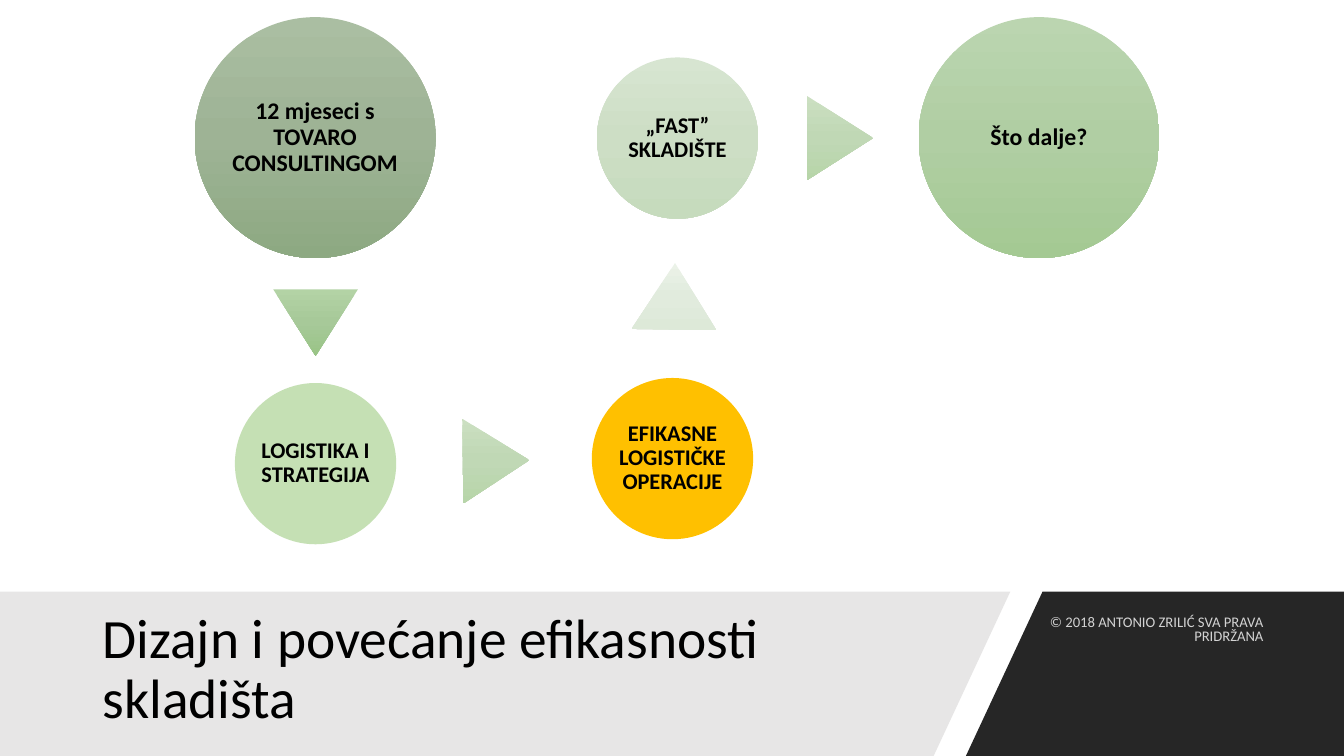
from copy import deepcopy
from pptx import Presentation
from pptx import util as u
from pptx.dml.color import RGBColor
from pptx.enum import shapes, text
from pptx.oxml.ns import qn
from lxml import etree

TITLE = "Dizajn i povećanje efikasnosti skladišta"
COPYRIGHT = "© 2018 ANTONIO ZRILIĆ SVA PRAVA PRIDRŽANA"
BIG, SMALL = 2.39, 1.6
ARROW_W, ARROW_H = 0.84, 0.66
PALE_ARROW = ("CBDFC1", "C0D8B5", "B7D5A9")

STEPS = [
    ("12 mjeseci s TOVARO CONSULTINGOM", 1.93, 0.17, BIG, 17, ("AABEA2", "9EB395", "8DA982")),
    ("LOGISTIKA I STRATEGIJA", 2.33, 3.8, SMALL, 16, ("C5E0B4",)),
    ("EFIKASNE LOGISTIČKE OPERACIJE", 5.87, 3.75, SMALL, 16, ("FFC000",)),
    ("„FAST” SKLADIŠTE", 5.92, 0.57, SMALL, 16, ("D7E5D1", "CDDEC5", "C6DBBD")),
    ("Što dalje?", 9.11, 0.17, BIG, 17, ("BBD5B0", "B0CEA3", "A4C993")),
]
ARROWS = [
    (2.71, 2.87, 180, ("B3D3A5", "A7C999", "99C486")),
    (4.5, 4.24, 89.2, PALE_ARROW),
    (6.27, 2.61, 0.9, ("EBF2E8", "E1EBDD", "DDE9D8")),
    (7.91, 1.04, 90, PALE_ARROW),
]
BANDS = [
    ("262626", [(10.34, 5.87), (13.33, 5.87), (13.33, 7.5), (9.58, 7.5)]),
    ("E7E6E6", [(0, 5.87), (10.02, 5.87), (9.26, 7.5), (0, 7.5)]),
]


def rgb(value):
    return RGBColor.from_string(value)


def paint(sp, colors):
    sp.shadow.inherit = False
    sp.line.fill.background()
    if len(colors) == 1:
        sp.fill.solid()
        sp.fill.fore_color.rgb = rgb(colors[0])
        return
    sp.fill.gradient()
    sp.fill.gradient_angle = 270
    grad = sp._element.spPr.find(qn("a:gradFill"))
    grad.set("rotWithShape", "0")
    stops = grad.find(qn("a:gsLst"))
    stops.insert(1, deepcopy(stops[0]))
    for i, (stop, color) in enumerate(zip(sp.fill.gradient_stops, colors)):
        stop.position = i / 2
        stop.color.rgb = rgb(color)


def write(sp, content, size, align, spacing, color="000000", bold=False):
    tf = sp.text_frame
    tf.word_wrap = True
    tf.vertical_anchor = text.MSO_ANCHOR.MIDDLE
    p = tf.paragraphs[0]
    p.text = content
    p.alignment = align
    p.line_spacing = spacing
    p.font.name = "Calibri"
    p.font.size = u.Pt(size)
    p.font.bold = bold
    p.font.color.rgb = rgb(color)
    return p


def add_text(s, box, *style):
    return write(s.shapes.add_textbox(*map(u.Inches, box)), *style)


def main():
    prs = Presentation()
    prs.slide_width, prs.slide_height = u.Inches(13.33), u.Inches(7.5)
    s = prs.slides.add_slide(prs.slide_layouts[6])

    for color, points in BANDS:
        corners = [(u.Inches(x), u.Inches(y)) for x, y in points]
        outline = s.shapes.build_freeform(*corners[0])
        outline.add_line_segments(corners[1:], close=True)
        paint(outline.convert_to_shape(), (color,))

    for label, x, y, d, size, colors in STEPS:
        sp = s.shapes.add_shape(shapes.MSO_SHAPE.OVAL, *map(u.Inches, (x, y, d, d)))
        paint(sp, colors)
        tf = sp.text_frame
        tf.margin_left = tf.margin_right = tf.margin_top = tf.margin_bottom = u.Inches(0.02)
        write(sp, label, size, text.PP_ALIGN.CENTER, 0.9, bold=True)

    for x, y, turn, colors in ARROWS:
        sp = s.shapes.add_shape(
            shapes.MSO_SHAPE.ISOSCELES_TRIANGLE, *map(u.Inches, (x, y, ARROW_W, ARROW_H)))
        sp.rotation = turn
        paint(sp, colors)

    add_text(s, (0.92, 6.05, 8.44, 1.2), TITLE, 39.6, text.PP_ALIGN.LEFT, 0.9)
    p = add_text(s, (10.3, 6.05, 2.33, 0.4), COPYRIGHT, 10.5, text.PP_ALIGN.RIGHT, 0.8, "FFFFFF")
    for color in p._p.iter(qn("a:srgbClr")):
        etree.SubElement(color, qn("a:alpha")).set("val", "80000")

    prs.save("out.pptx")


if __name__ == "__main__":
    main()
